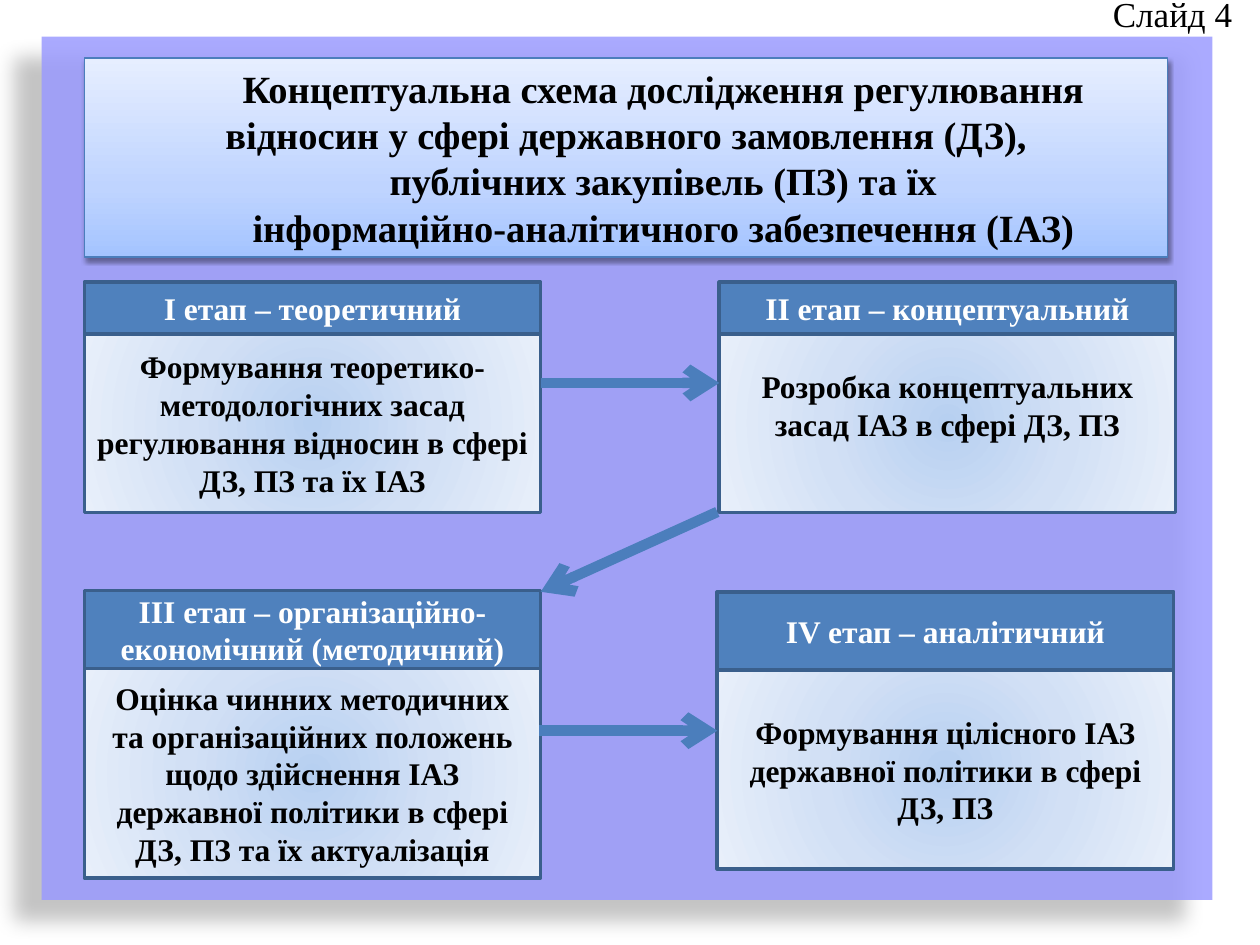
from lxml.etree import SubElement
from pptx import Presentation
from pptx.dml.color import RGBColor
from pptx.enum.shapes import MSO_CONNECTOR, MSO_SHAPE
from pptx.enum.text import MSO_ANCHOR, PP_ALIGN
from pptx.oxml import parse_xml
from pptx.oxml.ns import nsdecls, qn
from pptx.util import Cm, Pt

# Content
SLIDE_LABEL = "Слайд 4"
TITLE = [
    "Концептуальна схема дослідження регулювання відносин у сфері державного замовлення (ДЗ),",
    "публічних закупівель (ПЗ) та їх",
    "інформаційно-аналітичного забезпечення (ІАЗ)",
]
# Each stage: heading, text, left, top, heading height, body height, bottom inset (cm)
STAGES = [
    ("І етап – теоретичний",
     "Формування теоретико-методологічних засад регулювання відносин в сфері ДЗ, ПЗ та їх ІАЗ",
     1.7, 5.69, 1.04, 3.6, 0.13),
    ("ІІ етап – концептуальний",
     "Розробка концептуальних засад ІАЗ в сфері ДЗ, ПЗ",
     14.5, 5.69, 1.04, 3.6, 0.86),
    ("ІІІ етап – організаційно-економічний (методичний)",
     "Оцінка чинних методичних та організаційних положень щодо здійснення ІАЗ "
     "державної політики в сфері ДЗ, ПЗ та їх актуалізація",
     1.7, 11.9, 1.58, 4.22, 0.13),
    ("IV етап – аналітичний",
     "Формування цілісного ІАЗ державної політики в сфері ДЗ, ПЗ",
     14.46, 11.93, 1.58, 4.01, 0.13),
]
STAGE_WIDTH = 9.2
ARROWS = [  # start x, start y, end x, end y (cm)
    (10.9, 7.72, 14.5, 7.72),
    (10.87, 14.73, 14.46, 14.73),
    (14.46, 10.32, 10.9, 11.93),
]
TITLE_STOPS = [(0, "A4C4FF"), (35, "BFD4FF"), (100, "E6EEFF")]
BODY_STOPS = [(0, "B7D0F1"), (50, "D2E0F5"), (100, "E8EFFA")]
FONT = "Times New Roman"


def color(value):
    return RGBColor.from_string(value)


def add_box(slide, left, top, width, height, fill=None, line=None, line_width=2):
    shape = slide.shapes.add_shape(MSO_SHAPE.RECTANGLE, Cm(left), Cm(top), Cm(width), Cm(height))
    shape.shadow.inherit = False
    if fill:
        shape.fill.solid()
        shape.fill.fore_color.rgb = color(fill)
    if line:
        shape.line.color.rgb = color(line)
        shape.line.width = Pt(line_width)
    else:
        shape.line.fill.background()
    return shape


def set_gradient(shape, stops, direction):
    stop_xml = "".join(
        f'<a:gs pos="{position * 1000}"><a:srgbClr val="{value}"/></a:gs>' for position, value in stops)
    gradient = parse_xml(
        f'<a:gradFill {nsdecls("a")} rotWithShape="1"><a:gsLst>{stop_xml}</a:gsLst>{direction}</a:gradFill>')
    shape.fill.background()
    properties = shape.element.spPr
    properties.replace(properties.find(qn("a:noFill")), gradient)


def set_shadow(shape, opacity, blur, distance, angle):
    effects = shape.element.spPr.find(qn("a:effectLst"))
    shadow = SubElement(effects, qn("a:outerShdw"), blurRad=str(Pt(blur)), dist=str(Pt(distance)),
                        dir=str(angle * 60000), algn="ctr", rotWithShape="0")
    black = SubElement(shadow, qn("a:srgbClr"), val="000000")
    SubElement(black, qn("a:alpha"), val=str(opacity * 1000))


def add_text(shape, lines, size, text_color="000000", bold=True, align=PP_ALIGN.CENTER, indent=0):
    frame = shape.text_frame
    frame.vertical_anchor = MSO_ANCHOR.MIDDLE
    for index, line in enumerate(lines):
        paragraph = frame.add_paragraph() if index else frame.paragraphs[0]
        paragraph.alignment = align
        if indent:
            paragraph._p.get_or_add_pPr().set("indent", str(Cm(indent)))
        run = paragraph.add_run()
        run.text = line
        run.font.name = FONT
        run.font.size = Pt(size)
        run.font.bold = bold
        run.font.color.rgb = color(text_color)


def add_arrow(slide, *ends):
    connector = slide.shapes.add_connector(MSO_CONNECTOR.STRAIGHT, *map(Cm, ends))
    connector.line.color.rgb = color("4B7EBC")
    connector.line.width = Pt(6)
    SubElement(connector.line._get_or_add_ln(), qn("a:tailEnd"), type="arrow")
    SubElement(connector.element.spPr, qn("a:effectLst"))


def main():
    presentation = Presentation()
    presentation.slide_width, presentation.slide_height = Cm(25.4), Cm(19.05)
    slide = presentation.slides.add_slide(presentation.slide_layouts[6])

    # Background panel
    panel = add_box(slide, 0.84, 0.74, 23.6, 17.4, "9999FF")
    SubElement(panel.element.spPr.find(qn("a:solidFill"))[0], qn("a:alpha"), val="83000")
    set_shadow(panel, 28, 11.8, 19.7, 141)

    # Slide label
    label = slide.shapes.add_textbox(Cm(21.18), Cm(-0.28), Cm(3.91), Cm(1.12))
    label.text_frame.word_wrap = True
    add_text(label, [SLIDE_LABEL], 20, bold=False, align=PP_ALIGN.RIGHT)

    # Title
    title = add_box(slide, 1.7, 1.17, 21.84, 4.01, line="4B7EBC", line_width=0.75)
    set_gradient(title, TITLE_STOPS, '<a:lin ang="16200000" scaled="1"/>')
    set_shadow(title, 38, 3.1, 1.6, 90)
    add_text(title, TITLE, 22, indent=1.5)

    # Stages
    circle = '<a:path path="circle"><a:fillToRect l="50000" t="50000" r="50000" b="50000"/></a:path>'
    for heading, text, left, top, heading_height, body_height, bottom_inset in STAGES:
        header = add_box(slide, left, top, STAGE_WIDTH, heading_height, "4F81BD", "3A5F8C")
        add_text(header, [heading], 18, "FFFFFF")
        body = add_box(slide, left, top + heading_height, STAGE_WIDTH, body_height, line="3A5F8C")
        set_gradient(body, BODY_STOPS, circle)
        body.text_frame.margin_bottom = Cm(bottom_inset)
        add_text(body, [text], 18)

    # Arrows between stages
    for ends in ARROWS:
        add_arrow(slide, *ends)

    presentation.save("out.pptx")


if __name__ == "__main__":
    main()
